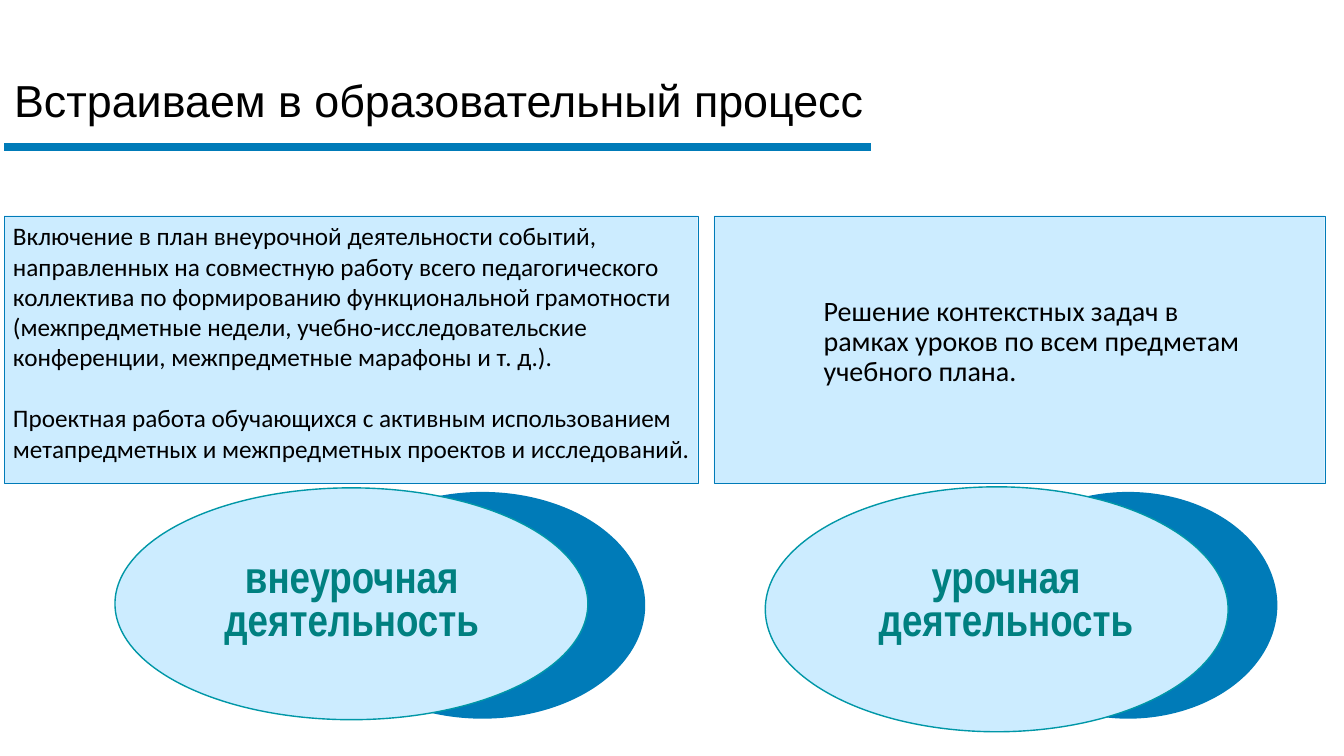
from dataclasses import dataclass
from typing import Optional

from pptx import Presentation
from pptx import util as u
from pptx.dml.color import RGBColor
from pptx.enum import shapes, text
from pptx.oxml.ns import qn

PX = 9144  # 100 px to the inch
BLUE = RGBColor(0x00, 0x7B, 0xB8)
PALE = RGBColor(0xCC, 0xEC, 0xFF)
CYAN = RGBColor(0x00, 0x97, 0xA7)
TEAL = RGBColor(0x00, 0x80, 0x80)
BLACK = RGBColor(0, 0, 0)
WHITE = RGBColor(0xFF, 0xFF, 0xFF)

OVAL = shapes.MSO_SHAPE.OVAL
RECT = shapes.MSO_SHAPE.RECTANGLE
LEFT = text.PP_ALIGN.LEFT
MID = text.PP_ALIGN.CENTER

Box = tuple[int, int, int, int]


@dataclass
class Form:
    kind: int
    box: Box
    fill: RGBColor
    line: Optional[RGBColor] = None
    width: float = 0


@dataclass
class Style:
    font: dict
    align: int = LEFT
    space: float = 1.0
    gap: int = 0


@dataclass
class Note:
    box: Box
    lines: list[str]
    style: Style


HEAD = Style({"name": "Arial", "size": u.Pt(32), "bold": False}, space=0.8)
BODY = Style({"name": "Calibri", "size": u.Pt(18)}, gap=22)
TASK = Style({"name": "Calibri", "size": u.Pt(20)}, space=0.9)
LABEL = Style({"name": "Arial Narrow", "size": u.Pt(32), "bold": True},
              align=MID, space=0.8)

FORMS = [
    # Shadow ovals
    Form(OVAL, (971, 488, 296, 225), BLUE),
    Form(OVAL, (317, 488, 323, 225), BLUE),
    # Panels
    Form(RECT, (708, 214, 606, 265), PALE, BLUE, 0.25),
    Form(RECT, (4, 214, 688, 265), PALE, BLUE, 0.25),
    # Front ovals
    Form(OVAL, (114, 484, 469, 230), PALE, CYAN, 1),
    Form(OVAL, (759, 483, 459, 243), PALE, CYAN, 1),
]

TITLE = Note((4, 77, 880, 53), ["Встраиваем в образовательный процесс"], HEAD)
NOTES = [
    Note((807, 290, 459, 101),
         ["Решение контекстных задач в рамках уроков по всем предметам "
          "учебного плана."], TASK),
    Note((825, 550, 346, 96), ["урочная деятельность"], LABEL),
    Note((150, 550, 398, 96), ["внеурочная деятельность"], LABEL),
    Note((3, 214, 702, 252),
         ["Включение в план внеурочной деятельности событий, направленных на "
          "совместную работу всего педагогического коллектива по формированию "
          "функциональной грамотности (межпредметные недели, "
          "учебно-исследовательские конференции, межпредметные марафоны "
          "и т. д.).",
          "Проектная работа обучающихся с активным использованием "
          "метапредметных и межпредметных проектов и исследований."], BODY),
]


def scale(box: Box) -> list[int]:
    return [n * PX for n in box]


def draw(slide, form: Form) -> None:
    shape = slide.shapes.add_shape(form.kind, *scale(form.box))
    shape.shadow.inherit = False
    shape.fill.solid()
    shape.fill.fore_color.rgb = form.fill
    if form.line is None:
        shape.line.fill.background()
    else:
        shape.line.color.rgb = form.line
        shape.line.width = u.Pt(form.width)


def write(shape, note: Note) -> None:
    shape.left, shape.top, shape.width, shape.height = scale(note.box)
    frame, style = shape.text_frame, note.style
    frame.word_wrap = True
    frame.auto_size = text.MSO_AUTO_SIZE.SHAPE_TO_FIT_TEXT
    frame.vertical_anchor = text.MSO_ANCHOR.TOP
    color = TEAL if style is LABEL else BLACK
    for i, line in enumerate(note.lines):
        para = frame.add_paragraph() if i else frame.paragraphs[0]
        para.alignment = style.align
        para.line_spacing = style.space
        para.space_before = u.Pt(style.gap if i else 0)
        run = para.add_run()
        run.text = line
        run.font.color.rgb = color
        for key, value in style.font.items():
            setattr(run.font, key, value)


def rule(slide, x: int, y: int, end: int) -> None:
    line = slide.shapes.add_connector(
        shapes.MSO_CONNECTOR.STRAIGHT, *scale((x, y, end, y)))
    line.line.color.rgb = BLUE
    line.line.width = u.Pt(6)
    props = line._element.spPr
    props.append(props.makeelement(qn("a:effectLst"), {}))


def main() -> None:
    deck = Presentation()
    deck.slide_width, deck.slide_height = scale((1333, 750))
    slide = deck.slides.add_slide(deck.slide_layouts[5])
    slide.background.fill.solid()
    slide.background.fill.fore_color.rgb = WHITE

    # Title and its rule
    write(slide.shapes.title, TITLE)
    rule(slide, 4, 146, 864)

    # Panels and ovals
    for form in FORMS:
        draw(slide, form)

    # Texts
    for note in NOTES:
        write(slide.shapes.add_textbox(*scale(note.box)), note)

    deck.save("out.pptx")


if __name__ == "__main__":
    main()
